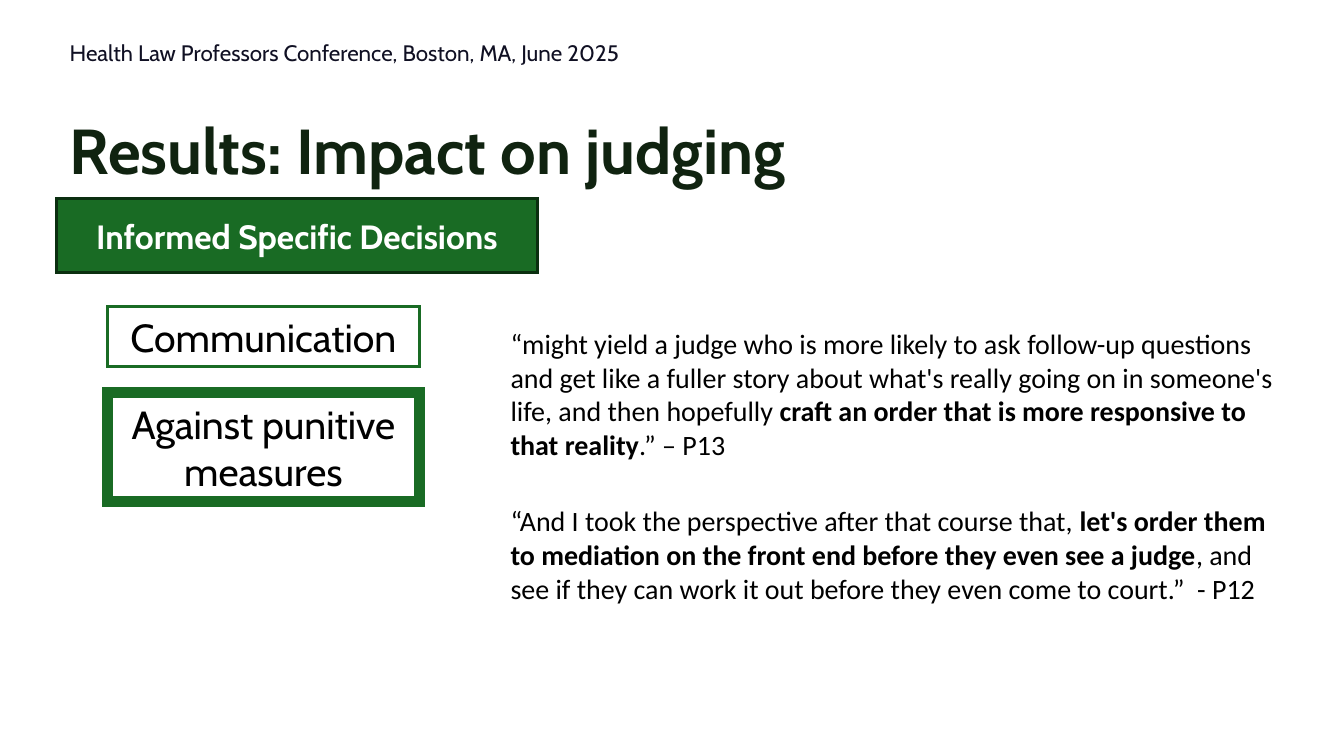
from lxml import etree
from pptx import Presentation
from pptx.dml.color import RGBColor
from pptx.enum import shapes, text
from pptx.oxml.ns import qn
from pptx.util import Inches, Pt

WHITE = RGBColor(0xFF, 0xFF, 0xFF)
BLACK = RGBColor(0, 0, 0)
GREEN = RGBColor(0x19, 0x6B, 0x24)
EDGE = RGBColor(0x0B, 0x2F, 0x10)
DARK = RGBColor(0x10, 0x23, 0x10)
NAVY = RGBColor(0x10, 0x10, 0x23)

MID = text.MSO_ANCHOR.MIDDLE
LEFT, WIDE = 0.42, 9.16


def write(shape, runs, size, font, color, anchor, pad=0.05, align=text.PP_ALIGN.LEFT):
    """Fill a shape with one paragraph of (words, bold) runs."""
    frame = shape.text_frame
    frame.word_wrap = True
    frame.vertical_anchor = anchor
    frame.margin_left = frame.margin_right = Inches(0.1)
    frame.margin_top = frame.margin_bottom = Inches(pad)
    para = frame.paragraphs[0]
    para.alignment = align
    for words, bold in runs:
        run = para.add_run()
        run.text = words
        run.font.name = font
        run.font.size = Pt(size)
        run.font.bold = bold
        run.font.color.rgb = color
    return para


def add_label(slide, box, words, size, color, fill, edge, weight, bold=False, pad=0.05):
    rect = slide.shapes.add_shape(shapes.MSO_SHAPE.RECTANGLE, *map(Inches, box))
    rect.shadow.inherit = False
    rect.fill.solid()
    rect.fill.fore_color.rgb = fill
    rect.line.color.rgb = edge
    rect.line.width = Pt(weight)
    # Square corners on the border
    border = rect.element.spPr.find(qn("a:ln"))
    etree.SubElement(border, qn("a:miter"), lim="800000")
    write(rect, [(words, bold)], size, "Cabin", color, MID, pad, text.PP_ALIGN.CENTER)


def add_text(slide, box, *style):
    return write(slide.shapes.add_textbox(*map(Inches, box)), *style)


def add_head(slide, left, top, width):
    # Conference line, title and section banner
    line = add_text(slide, (left, top, width / 2, 0.35),
                    [("Health Law Professors Conference, Boston, MA, June 2025", False)],
                    12, "Cabin", NAVY, MID, 0.1)
    line.line_spacing = 0.9
    line.space_after = Pt(12)
    add_text(slide, (left, top + 0.54, width, 0.72),
             [("Results: Impact on judging", True)],
             34, "Cabin", DARK, text.MSO_ANCHOR.BOTTOM, 0.1)
    add_label(slide, (left, top + 1.25, 3.58, 0.55), "Informed Specific Decisions",
              18, WHITE, GREEN, EDGE, 1.5, True, 0.1)


def add_themes(slide, left, top, width):
    # Theme boxes; the heavy border marks the current theme
    for words, drop, height, weight in (
        ("Communication", 0, 0.45, 1.5),
        ("Against punitive measures", 0.64, 0.81, 6),
    ):
        add_label(slide, (left, top + drop, width, height), words,
                  21, BLACK, WHITE, GREEN, weight)


def add_quotes(slide, left, top, width):
    # Interview quotes with the key phrases in bold
    quotes = (
        (0, 1.11, [
            ("“might yield a judge who is more likely to ask follow-up questions "
             "and get like a fuller story about what's really going on in "
             "someone's life, and then hopefully ", False),
            ("craft an order that is more responsive to that reality", True),
            (".” – P13", False),
        ]),
        (1.32, 0.86, [
            ("“And I took the perspective after that course that, ", False),
            ("let's order them to mediation on the front end before they even "
             "see a judge", True),
            (", and see if they can work it out before they even come to "
             "court.”  - P12", False),
        ]),
    )
    for drop, height, runs in quotes:
        add_text(slide, (left, top + drop, width, height), runs,
                 15, "Calibri", BLACK, text.MSO_ANCHOR.TOP)


def main():
    deck = Presentation()
    # Widescreen, 16 to 9
    deck.slide_width = Inches(10)
    deck.slide_height = deck.slide_width * 9 // 16
    slide = deck.slides.add_slide(deck.slide_layouts[6])
    add_head(slide, LEFT, 0.23, WIDE)
    add_themes(slide, 0.8, 2.28, 2.32)
    add_quotes(slide, 3.7, 2.38, 6.02)
    deck.save("out.pptx")


if __name__ == "__main__":
    main()
